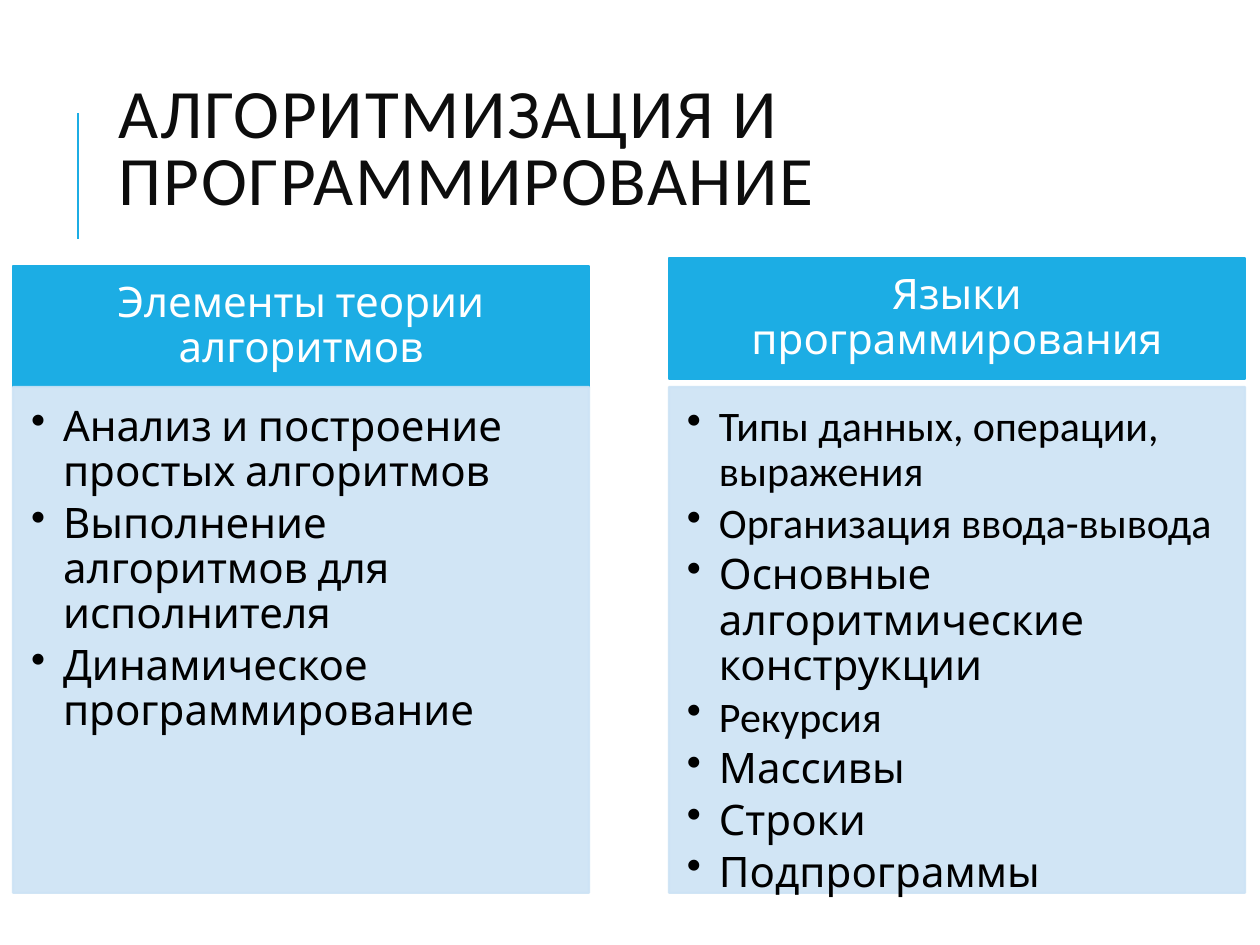
from dataclasses import dataclass

from lxml import etree
from pptx import Presentation
from pptx.dml.color import RGBColor
from pptx.enum.shapes import MSO_CONNECTOR, MSO_SHAPE
from pptx.enum.text import MSO_ANCHOR, PP_ALIGN
from pptx.oxml.ns import qn
from pptx.util import Emu, Pt

RECTANGLE = MSO_SHAPE.RECTANGLE
STRAIGHT = MSO_CONNECTOR.STRAIGHT
MIDDLE, TOP = MSO_ANCHOR.MIDDLE, MSO_ANCHOR.TOP
CENTER, LEFT = PP_ALIGN.CENTER, PP_ALIGN.LEFT

EMU_PER_PX = 914400 / 126


@dataclass(frozen=True)
class Theme:
    accent: RGBColor = RGBColor.from_string("1CADE4")
    panel: RGBColor = RGBColor.from_string("CDE3F5")
    title: RGBColor = RGBColor.from_string("0D0D0D")
    body: RGBColor = RGBColor.from_string("000000")
    light: RGBColor = RGBColor.from_string("FFFFFF")
    title_size: float = 39.6
    text_size: float = 24
    item_gap: float = 3.6
    panel_opacity: int = 90
    main_font: str = "Cabin"
    plain_font: str = "Calibri"


THEME = Theme()


@dataclass(frozen=True)
class Box:
    left: int
    top: int
    width: int
    height: int


@dataclass(frozen=True)
class Item:
    text: str
    font: str = THEME.main_font


@dataclass(frozen=True)
class Column:
    left: int
    header_top: int
    header: str
    items: tuple[Item, ...]


COLUMN_WIDTH, HEADER_HEIGHT = 576, 121
PANEL_TOP, PANEL_HEIGHT = 387, 506
BULLET_INDENT = 32

COLUMNS = (
    Column(13, 266, "Элементы теории алгоритмов", (
        Item("Анализ и построение простых алгоритмов"),
        Item("Выполнение алгоритмов для исполнителя"),
        Item("Динамическое программирование"),
    )),
    Column(669, 258, "Языки программирования", (
        Item("Типы данных, операции, выражения", THEME.plain_font),
        Item("Организация ввода-вывода", THEME.plain_font),
        Item("Основные алгоритмические конструкции"),
        Item("Рекурсия", THEME.plain_font),
        Item("Массивы"),
        Item("Строки"),
        Item("Подпрограммы"),
    )),
)


def px(value: int) -> Emu:
    return Emu(round(value * EMU_PER_PX))


def place(box: Box) -> tuple[Emu, ...]:
    return px(box.left), px(box.top), px(box.width), px(box.height)


def set_frame(frame, anchor, insets: tuple[int, int, int, int]) -> None:
    """Wrap the text and set its anchor and left, top, right, bottom insets."""
    frame.word_wrap = True
    frame.vertical_anchor = anchor
    (frame.margin_left, frame.margin_top,
     frame.margin_right, frame.margin_bottom) = map(px, insets)


def format_paragraph(para, font: str, size: float, color: RGBColor,
                     align, spacing: float) -> None:
    para.alignment = align
    para.line_spacing = spacing
    for span in para.runs:
        span.font.name = font
        span.font.size = Pt(size)
        span.font.color.rgb = color


def add_bullet(para) -> None:
    properties = para._p.get_or_add_pPr()
    properties.set("marL", str(px(BULLET_INDENT)))
    properties.set("indent", str(-px(BULLET_INDENT)))
    etree.SubElement(properties, qn("a:buChar")).set("char", "•")


def add_panel(page, box: Box, color: RGBColor, opacity: int = 100):
    shape = page.shapes.add_shape(RECTANGLE, *place(box))
    shape.shadow.inherit = False
    shape.line.width = Pt(1.25)
    for fill in (shape.fill, shape.line.fill):
        fill.solid()
        fill.fore_color.rgb = color
    if opacity < 100:
        for tint in shape._element.spPr.iter(qn("a:srgbClr")):
            etree.SubElement(tint, qn("a:alpha")).set("val", str(opacity * 1000))
    return shape


def add_title(page) -> None:
    rule = page.shapes.add_connector(STRAIGHT, px(78), px(239), px(78), px(113))
    rule.line.color.rgb = THEME.accent
    rule.line.width = Pt(1.5)
    etree.SubElement(rule._element.spPr, qn("a:effectLst"))

    frame = page.shapes.add_textbox(*place(Box(106, 81, 1121, 210))).text_frame
    set_frame(frame, MIDDLE, (13, 6, 13, 74))
    frame.text = "АЛГОРИТМИЗАЦИЯ И ПРОГРАММИРОВАНИЕ"
    para = frame.paragraphs[0]
    format_paragraph(para, THEME.plain_font, THEME.title_size, THEME.title, LEFT, 0.8)
    para.runs[0].font._element.set("spc", "100")


def add_column(page, column: Column) -> None:
    header_box = Box(column.left, column.header_top, COLUMN_WIDTH, HEADER_HEIGHT)
    header = add_panel(page, header_box, THEME.accent).text_frame
    set_frame(header, MIDDLE, (24, 14, 24, 14))
    header.text = column.header
    format_paragraph(header.paragraphs[0], THEME.main_font, THEME.text_size,
                     THEME.light, CENTER, 0.9)

    panel_box = Box(column.left, PANEL_TOP, COLUMN_WIDTH, PANEL_HEIGHT)
    body = add_panel(page, panel_box, THEME.panel, THEME.panel_opacity).text_frame
    set_frame(body, TOP, (18, 18, 24, 26))
    body.text = "\n".join(item.text for item in column.items)
    for para, item in zip(body.paragraphs, column.items):
        format_paragraph(para, item.font, THEME.text_size, THEME.body, LEFT, 0.9)
        para.space_after = Pt(THEME.item_gap)
        add_bullet(para)


def main() -> None:
    deck = Presentation()
    deck.slide_width, deck.slide_height = px(1260), px(945)
    page = deck.slides.add_slide(deck.slide_layouts[6])
    add_title(page)
    for column in COLUMNS:
        add_column(page, column)
    deck.save("out.pptx")


if __name__ == "__main__":
    main()
